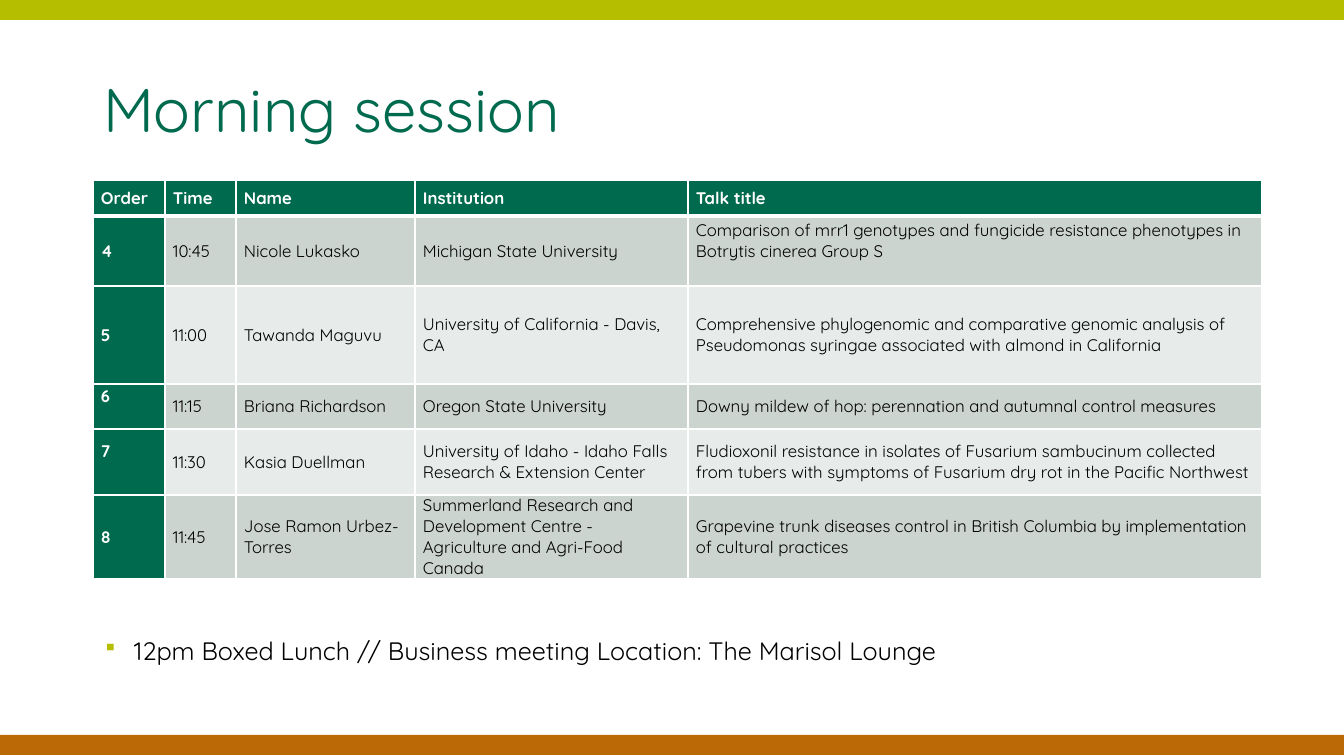
from lxml import etree
from pptx import Presentation, util as u
from pptx.dml.color import RGBColor
from pptx.enum import shapes, text
from pptx.oxml import ns

FONT = "Quicksand"
GREEN, LIME, ORANGE = "006A4E", "B5BF00", "BA6906"
WHITE, BLACK = "FFFFFF", "000000"
BANDS = ["CCD4D0", "E7EBE9"]

TITLE = "Morning session"
LUNCH = "12pm Boxed Lunch // Business meeting Location: The\u00a0Marisol Lounge"
HEADERS = ["Order", "Time", "Name", "Institution", "Talk title"]
TALKS = [
    ("4", "10:45", "Nicole Lukasko", "Michigan State University",
     "Comparison of mrr1 genotypes and fungicide resistance phenotypes in Botrytis cinerea Group S"),
    ("5", "11:00", "Tawanda Maguvu", "University of California - Davis, CA",
     "Comprehensive phylogenomic and comparative genomic analysis of Pseudomonas syringae "
     "associated with almond in California"),
    ("6", "11:15", "Briana Richardson", "Oregon State University",
     "Downy mildew of hop: perennation and autumnal control measures"),
    ("7", "11:30", "Kasia Duellman", "University of Idaho - Idaho Falls Research & Extension Center",
     "Fludioxonil resistance in isolates of Fusarium sambucinum collected from tubers with "
     "symptoms of Fusarium dry rot in the Pacific Northwest"),
    ("8", "11:45", "Jose Ramon Urbez-Torres",
     "Summerland Research and Development Centre - Agriculture and Agri-Food Canada",
     "Grapevine trunk diseases control in British Columbia by implementation of cultural practices"),
]
COLUMN_WIDTHS = [72, 71, 179, 273, 574]
ROW_HEIGHTS = [36, 70, 98, 45, 66, 84]
RAISED_CELLS = {(1, 4), (3, 0), (4, 0)}  # (row, column) set one line higher
LINE_HEIGHT = 21
SLIDE_WIDTH, SLIDE_HEIGHT, BAR_HEIGHT = 1344, 756, 20
LEFT = 93


def px(length):
    return u.Inches(length / 100.8)


def color(value):
    return RGBColor.from_string(value)


def style(paragraph, size, value, bold=False):
    font = paragraph.font
    font.name, font.size, font.bold = FONT, u.Pt(size), bold
    font.color.rgb = color(value)


def add_bar(slide, top, value):
    bar = slide.shapes.add_shape(shapes.MSO_SHAPE.RECTANGLE, 0, px(top), px(SLIDE_WIDTH), px(BAR_HEIGHT))
    bar.shadow.inherit = False
    bar.fill.solid()
    bar.fill.fore_color.rgb = color(value)
    bar.line.fill.background()


def add_borders(cell, row):
    """White rules, with a thicker one between the header and the first talk."""
    widths = {"lnL": 1, "lnR": 1, "lnT": 3 if row == 1 else 1, "lnB": 3 if row == 0 else 1}
    properties = cell._tc.get_or_add_tcPr()
    for side, width in widths.items():
        line = etree.SubElement(properties, ns.qn(f"a:{side}"), w=str(u.Pt(width)))
        fill = etree.SubElement(line, ns.qn("a:solidFill"))
        etree.SubElement(fill, ns.qn("a:srgbClr"), val=WHITE)


def fill_cell(cell, row, column, content):
    dark = row == 0 or column == 0
    cell.text = content
    cell.vertical_anchor = text.MSO_ANCHOR.MIDDLE
    cell.margin_left = cell.margin_right = px(8)
    cell.margin_top = 0
    cell.margin_bottom = px(LINE_HEIGHT if (row, column) in RAISED_CELLS else 0)
    add_borders(cell, row)
    cell.fill.solid()
    cell.fill.fore_color.rgb = color(GREEN if dark else BANDS[(row - 1) % 2])
    style(cell.text_frame.paragraphs[0], 12, WHITE if dark else BLACK, dark)


def add_schedule(slide):
    rows = [HEADERS, *TALKS]
    table = slide.shapes.add_table(len(rows), len(HEADERS), px(LEFT), px(180),
                                   px(sum(COLUMN_WIDTHS)), px(sum(ROW_HEIGHTS))).table
    for column, width in zip(table.columns, COLUMN_WIDTHS):
        column.width = px(width)
    for row, height in zip(table.rows, ROW_HEIGHTS):
        row.height = px(height)
    for r, row in enumerate(rows):
        for c, content in enumerate(row):
            fill_cell(table.cell(r, c), r, c, content)


def add_lunch_note(slide):
    frame = slide.shapes.add_textbox(px(LEFT), px(600), px(914), px(102)).text_frame
    frame.word_wrap = True
    frame.margin_top = px(35)
    paragraph = frame.paragraphs[0]
    paragraph.text = LUNCH
    properties = paragraph._p.get_or_add_pPr()
    properties.set("marL", str(px(31)))
    properties.set("indent", str(-px(31)))
    bullet_color = etree.SubElement(properties, ns.qn("a:buClr"))
    etree.SubElement(bullet_color, ns.qn("a:srgbClr"), val=LIME)
    etree.SubElement(properties, ns.qn("a:buSzPct"), val="80000")
    etree.SubElement(properties, ns.qn("a:buChar"), char="▪")
    style(paragraph, 18, BLACK)


def format_title(title):
    title.left, title.top, title.width, title.height = px(LEFT), px(40), px(1159), px(146)
    title.text = TITLE
    title.text_frame.vertical_anchor = text.MSO_ANCHOR.MIDDLE
    paragraph = title.text_frame.paragraphs[0]
    paragraph.alignment = text.PP_ALIGN.LEFT
    paragraph.line_spacing = 0.9
    style(paragraph, 44, GREEN)


def main():
    presentation = Presentation()
    presentation.slide_width, presentation.slide_height = px(SLIDE_WIDTH), px(SLIDE_HEIGHT)
    slide = presentation.slides.add_slide(presentation.slide_layouts[5])
    add_bar(slide, 0, LIME)
    add_bar(slide, 735, ORANGE)
    add_schedule(slide)
    add_lunch_note(slide)
    format_title(slide.shapes.title)
    presentation.save("out.pptx")


if __name__ == "__main__":
    main()
